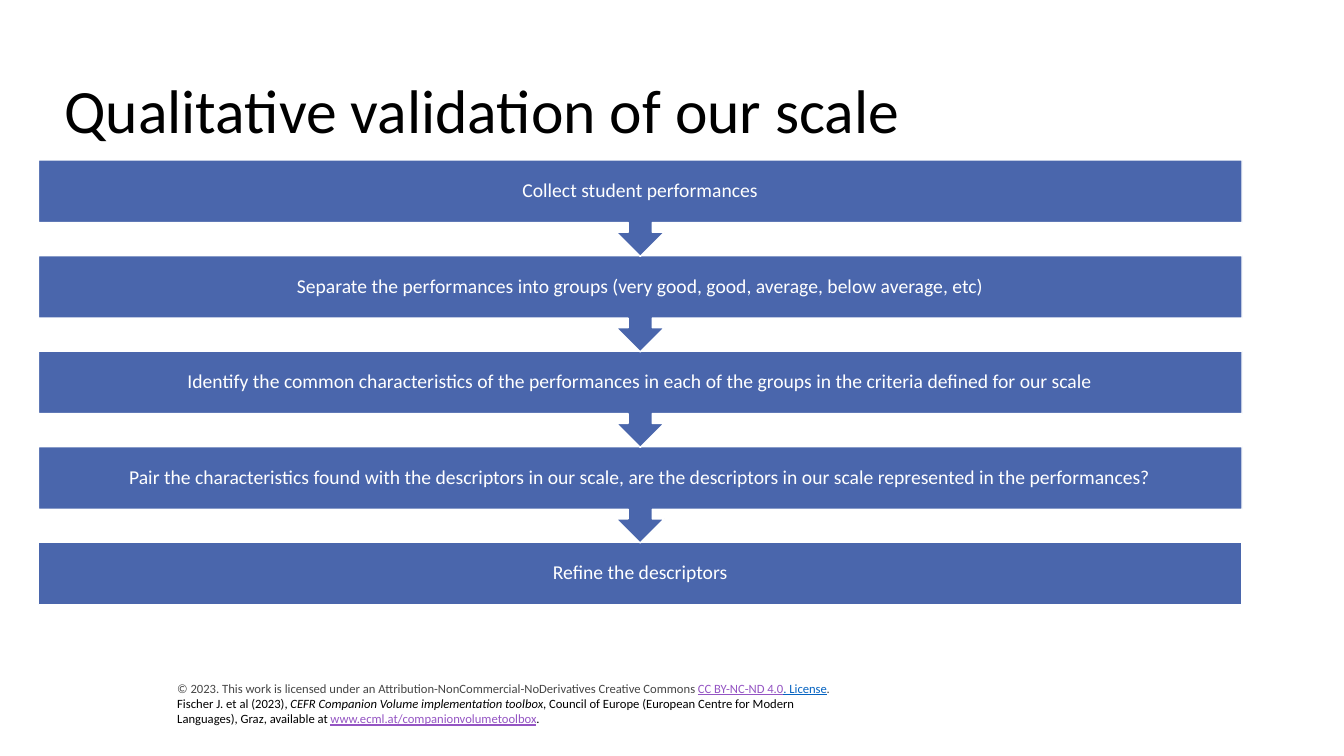
from pptx import Presentation
from pptx import util as u
from pptx.dml import color
from pptx.enum import shapes, text


class Theme:
    font = "Calibri"
    title, step, footer = 44, 14, 9
    blue, white, black = "4A66AC", "FFFFFF", "000000"
    grey, visited, link = "464646", "9454C3", "0563C1"


def add_text(para, words, size, ink=Theme.black, italic=False, underline=False):
    span = para.add_run()
    span.text = words
    span.font.name = Theme.font
    span.font.size = u.Pt(size)
    span.font.italic = italic
    span.font.underline = underline
    span.font.color.rgb = color.RGBColor.from_string(ink)


deck = Presentation()
deck.slide_width, deck.slide_height = u.Pt(960), u.Pt(540)
page = deck.slides.add_slide(deck.slide_layouts[5])

footer = page.shapes.add_textbox(u.Pt(119.5), u.Pt(482.4), u.Pt(493.2), u.Pt(40.3))
frame = footer.text_frame
frame.word_wrap = True
frame.vertical_anchor = text.MSO_ANCHOR.MIDDLE
footer_lines = [
    [
        ("© 2023. This work is licensed under an Attribution-NonCommercial-NoDerivatives Creative Commons ",
         {"ink": Theme.grey}),
        ("CC BY-NC-ND 4.0", {"ink": Theme.visited, "underline": True}),
        (". License", {"ink": Theme.link, "underline": True}),
        (".", {"ink": Theme.grey, "italic": True}),
    ],
    [
        ("Fischer J. et al (2023), ", {}),
        ("CEFR Companion Volume implementation toolbox", {"italic": True}),
        (", Council of Europe (European Centre for Modern Languages), Graz, available at ", {}),
        ("www.ecml.at/companionvolumetoolbox", {"ink": Theme.visited, "underline": True}),
        (".", {}),
    ],
]
for index, line in enumerate(footer_lines):
    para = frame.add_paragraph() if index else frame.paragraphs[0]
    for words, style in line:
        add_text(para, words, Theme.footer, **style)

title = page.shapes.title
title.left, title.top, title.width, title.height = u.Pt(38.9), u.Pt(28.8), u.Pt(883.4), u.Pt(104.4)
title.text_frame.auto_size = text.MSO_AUTO_SIZE.NONE
title.text_frame.vertical_anchor = text.MSO_ANCHOR.MIDDLE
para = title.text_frame.paragraphs[0]
para.alignment = text.PP_ALIGN.LEFT
para.line_spacing = 0.9
add_text(para, "Qualitative validation of our scale", Theme.title)

steps = [
    "Collect student performances",
    "Separate the performances into groups (very good, good, average, below average, etc)",
    "Identify the common characteristics of the performances in each of the groups in the criteria defined for our scale",
    "Pair the characteristics found with the descriptors in our scale, "
    "are the descriptors in our scale represented in the performances?",
    "Refine the descriptors",
]
first_top, pitch = 114.3, 68.25
last = len(steps) - 1
for index in reversed(range(len(steps))):
    if index == last:
        kind, height = shapes.MSO_SHAPE.RECTANGLE, 44.6
    else:
        kind, height = shapes.MSO_SHAPE.DOWN_ARROW_CALLOUT, 68.8
    box = page.shapes.add_shape(
        kind, u.Pt(27.5), u.Pt(first_top + index * pitch), u.Pt(859.7), u.Pt(height))
    box.shadow.inherit = False
    box.fill.solid()
    box.fill.fore_color.rgb = color.RGBColor.from_string(Theme.blue)
    box.line.color.rgb = color.RGBColor.from_string(Theme.white)
    box.line.width = u.Pt(1)
    frame = box.text_frame
    frame.word_wrap = True
    frame.vertical_anchor = text.MSO_ANCHOR.MIDDLE
    frame.margin_left = frame.margin_right = frame.margin_top = frame.margin_bottom = u.Pt(7.9)
    para = frame.paragraphs[0]
    para.alignment = text.PP_ALIGN.CENTER
    para.line_spacing = 0.9
    add_text(para, steps[index], Theme.step, ink=Theme.white)

deck.save("out.pptx")
